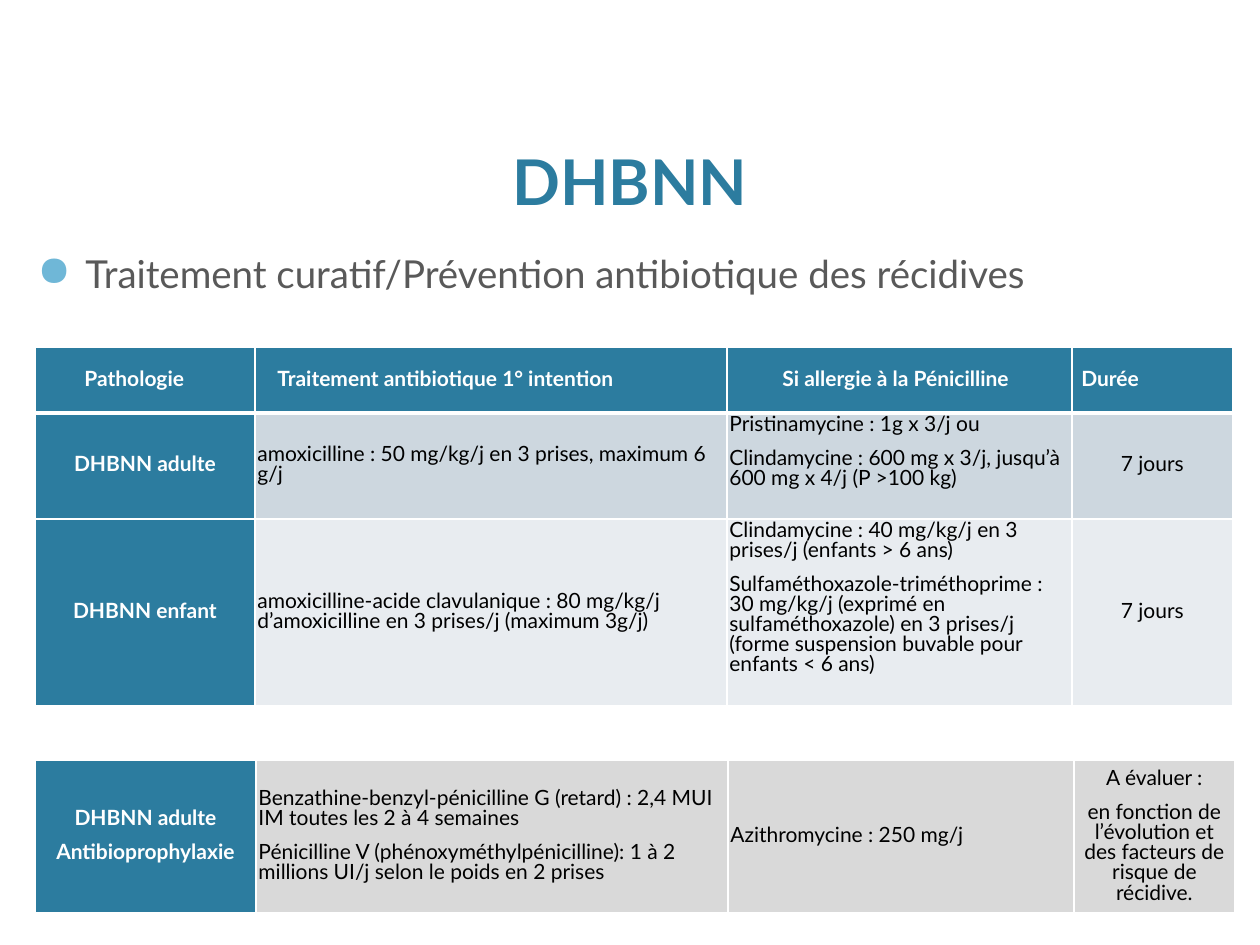
from lxml.etree import SubElement
from pptx import Presentation
from pptx.dml.color import RGBColor
from pptx.enum.text import MSO_ANCHOR as Anchor, PP_ALIGN as Align
from pptx.oxml.ns import qn
from pptx.util import Emu, Pt

BLUE, WHITE, BLACK = "2C7C9F", "FFFFFF", "000000"
FONT = "Lato"
TITLE = "DHBNN"
TOPIC = "Traitement curatif/Prévention antibiotique des récidives"

# Header label and its left indent in px
HEADS = [
    ("Pathologie", 47),
    ("Traitement antibiotique 1° intention", 20),
    ("Si allergie à la Pénicilline", 53),
    ("Durée", 7),
]
# Fill of the row, then the paragraphs of each cell
CARE = [
    ("CDD7DF", [
        ["DHBNN adulte"],
        ["amoxicilline : 50 mg/kg/j en 3 prises, maximum 6 g/j"],
        ["Pristinamycine : 1g x 3/j ou",
         "Clindamycine : 600 mg x 3/j, jusqu’à 600 mg x 4/j (P >100 kg)"],
        ["7 jours"],
    ]),
    ("E8ECF0", [
        ["DHBNN enfant"],
        ["amoxicilline-acide clavulanique : 80 mg/kg/j d’amoxicilline "
         "en 3 prises/j (maximum 3g/j)"],
        ["Clindamycine : 40 mg/kg/j en 3 prises/j (enfants > 6 ans)",
         "Sulfaméthoxazole-triméthoprime : 30 mg/kg/j (exprimé en "
         "sulfaméthoxazole) en 3 prises/j (forme suspension buvable "
         "pour enfants < 6 ans)"],
        ["7 jours"],
    ]),
]
GUARD = ("D9D9D9", [
    ["DHBNN adulte", "Antibioprophylaxie"],
    ["Benzathine-benzyl-pénicilline G (retard) : 2,4 MUI IM toutes "
     "les 2 à 4 semaines",
     "Pénicilline V (phénoxyméthylpénicilline): 1 à 2 millions UI/j "
     "selon le poids en 2 prises"],
    ["Azithromycine : 250 mg/j"],
    ["A évaluer :",
     "en fonction de l’évolution et des facteurs de risque de récidive."],
])


def px(n):
    return Emu(round(n * 914400 / 126))


def rgb(code):
    return RGBColor.from_string(code)


def style(para, size, color, bold=False):
    for run in para.runs:
        font = run.font
        font.name, font.size, font.bold = FONT, Pt(size), bold
        font.color.rgb = rgb(color)


def indent(para, left, first=0):
    props = para._p.get_or_add_pPr()
    props.set("marL", str(px(left)))
    props.set("indent", str(px(first)))
    return props


def add_text(slide, box, text, size, color, bold=False):
    frame = slide.shapes.add_textbox(*map(px, box)).text_frame
    frame.word_wrap = True
    frame.text = text
    style(frame.paragraphs[0], size, color, bold)
    return frame


def add_bullet(para, char, color, percent):
    props = indent(para, 48, -48)
    tint = SubElement(props, qn("a:buClr"))
    SubElement(tint, qn("a:srgbClr"), val=color)
    SubElement(props, qn("a:buSzPct"), val=str(percent * 1000))
    SubElement(props, qn("a:buChar"), char=char)


def edge(cell, top=1, bottom=1):
    """Draw white cell borders, widths in points; they go before the fill."""
    props = cell._tc.get_or_add_tcPr()
    sides = [("L", 1), ("R", 1), ("T", top), ("B", bottom)]
    for spot, (side, width) in enumerate(sides):
        line = SubElement(props, qn("a:ln" + side), w=str(Pt(width)))
        fill = SubElement(line, qn("a:solidFill"))
        SubElement(fill, qn("a:srgbClr"), val=WHITE)
        props.insert(spot, line)


def fill_cell(cell, texts, fill, color, bold, align, lead=11.5, gap=4):
    cell.fill.solid()
    cell.fill.fore_color.rgb = rgb(fill)
    cell.margin_left = cell.margin_right = px(2.5)
    cell.margin_top = cell.margin_bottom = px(2.5)
    cell.vertical_anchor = Anchor.MIDDLE
    cell.text_frame.text = "\n".join(texts)
    for i, para in enumerate(cell.text_frame.paragraphs):
        para.alignment = align
        para.line_spacing = Pt(lead)
        para.space_before = Pt(gap if i else 0)
        para.space_after = Pt(gap)
        style(para, 12, color, bold)


def fill_row(row, data):
    fill, texts = data
    for i, (cell, text) in enumerate(zip(row.cells, texts)):
        side = i in (0, 3)
        fill_cell(cell, text, BLUE if i == 0 else fill,
                  WHITE if i == 0 else BLACK, i == 0,
                  Align.CENTER if side else Align.LEFT)


def add_grid(slide, left, top, cols, rows):
    box = map(px, (left, top, sum(cols), sum(rows)))
    grid = slide.shapes.add_table(len(rows), len(cols), *box).table
    grid.first_row = grid.horz_banding = False
    for col, width in zip(grid.columns, cols):
        col.width = px(width)
    for row, height in zip(grid.rows, rows):
        row.height = px(height)
    return grid


def main():
    deck = Presentation()
    deck.slide_width, deck.slide_height = px(1260), px(945)
    slide = deck.slides.add_slide(deck.slide_layouts[6])

    body = add_text(slide, (25, 244, 1211, 605), TOPIC, 22, "595959")
    add_bullet(body.paragraphs[0], "●", "6FB7D7", 110)
    title = add_text(slide, (76, 106, 1108, 118), TITLE, 36, BLUE, True)
    title.vertical_anchor = Anchor.BOTTOM
    title.paragraphs[0].alignment = Align.CENTER

    care = add_grid(slide, 35, 347, (220, 472, 345, 161), (66, 106, 187))
    for cell, (text, left) in zip(care.rows[0].cells, HEADS):
        fill_cell(cell, [text], BLUE, WHITE, True, Align.LEFT, 12.5, 6)
        indent(cell.text_frame.paragraphs[0], left)
        edge(cell, bottom=3)
    for i, data in enumerate(CARE, 1):
        fill_row(care.rows[i], data)
        care.cell(i, 2).vertical_anchor = Anchor.TOP
        for cell in care.rows[i].cells:
            edge(cell, top=3 if i == 1 else 1)

    guard = add_grid(slide, 35, 760, (221, 472, 346, 161), (154,))
    fill_row(guard.rows[0], GUARD)
    for cell in guard.rows[0].cells:
        edge(cell, bottom=3)

    deck.save("out.pptx")


if __name__ == "__main__":
    main()
